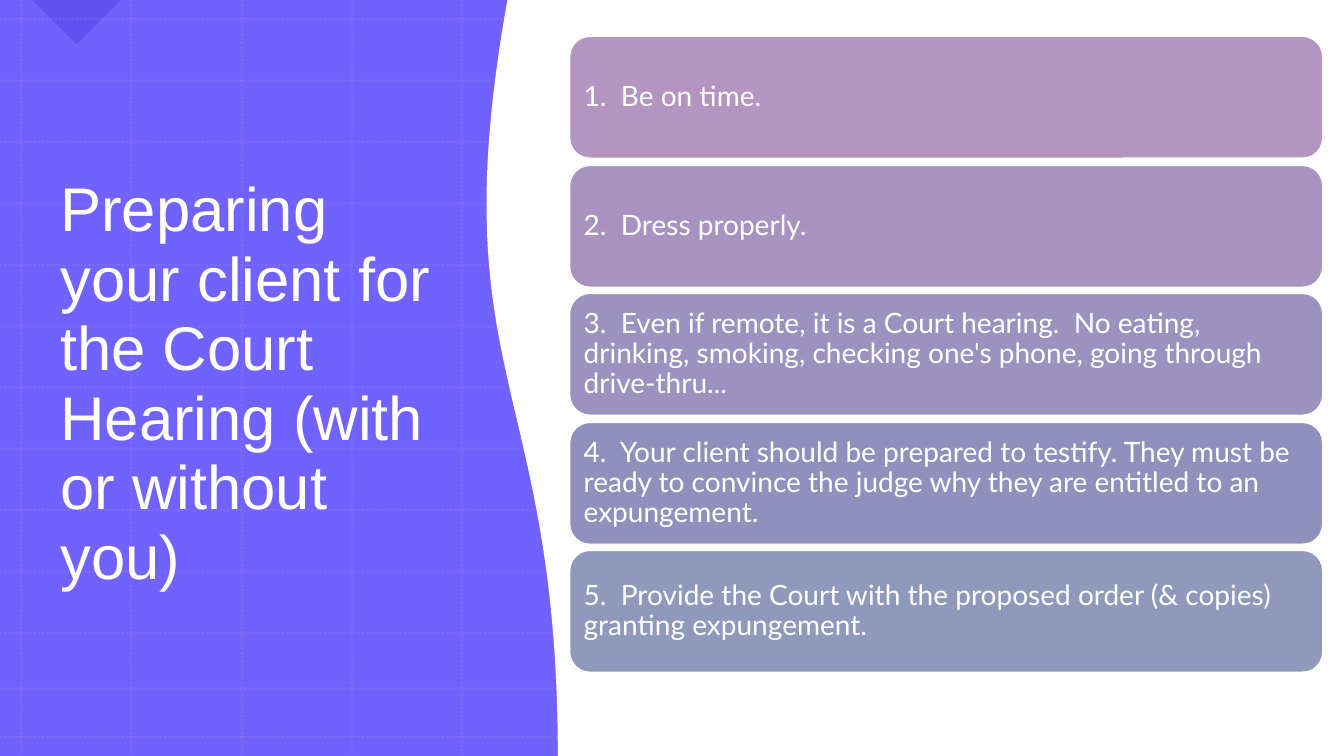
from pptx import Presentation
from pptx.dml.color import RGBColor
from pptx.enum.dml import MSO_LINE
from pptx.enum.shapes import MSO_CONNECTOR, MSO_SHAPE
from pptx.enum.text import MSO_ANCHOR, PP_ALIGN
from pptx.oxml.ns import qn
from pptx.util import Pt
from lxml.etree import SubElement

PX = 9144
WIDE, HIGH = 1333, 750
WHITE = RGBColor(0xFF, 0xFF, 0xFF)
VIOLET = RGBColor(0x71, 0x62, 0xFE)
NAVY = RGBColor(0x12, 0x01, 0xAF)
MAUVE = RGBColor(0xB4, 0x95, 0xC2)
LILAC = RGBColor(0xA8, 0x93, 0xC0)
IRIS = RGBColor(0x9C, 0x92, 0xBF)
DUSK = RGBColor(0x91, 0x90, 0xBD)
SLATE = RGBColor(0x8F, 0x99, 0xBB)

TITLE = "Preparing your client for the Court Hearing (with or without you)"
STEPS = [
    ("1.  Be on time.", MAUVE),
    ("2.  Dress properly.", LILAC),
    ("3.  Even if remote, it is a Court hearing.  No eating, drinking, smoking, "
     "checking one's phone, going through drive-thru...", IRIS),
    ("4.  Your client should be prepared to testify. They must be ready to "
     "convince the judge why they are entitled to an expungement.", DUSK),
    ("5.  Provide the Court with the proposed order (& copies) granting "
     "expungement.", SLATE),
]


def apply(item, style):
    for name, value in style.items():
        setattr(item, name, value)


def fade(fill, share):
    color = fill._xPr.find(qn("a:solidFill"))[0]
    SubElement(color, qn("a:alpha"), val=str(share * 1000))


def paint(shape, color, edge=None):
    shape.shadow.inherit = False
    shape.fill.solid()
    shape.fill.fore_color.rgb = color
    if edge is None:
        shape.line.fill.background()
    else:
        shape.line.color.rgb = edge
        shape.line.width = Pt(1)


def add_block(slide, kind, box, color, edge=None):
    shape = slide.shapes.add_shape(kind, *(n * PX for n in box))
    paint(shape, color, edge)
    return shape


def add_rule(slide, *ends):
    rule = slide.shapes.add_connector(MSO_CONNECTOR.STRAIGHT, *(n * PX for n in ends))
    SubElement(rule._element.spPr, qn("a:effectLst"))
    rule.line.color.rgb = MAUVE
    apply(rule.line, {"width": Pt(1.5), "dash_style": MSO_LINE.ROUND_DOT})
    fade(rule.line.fill, 20)


def add_grid(slide):
    for i in range(5):
        x = round(21 + 109.3 * i)
        add_rule(slide, x, 0, x, HIGH)
    for y in [round(19 + 60.9 * i) for i in range(11)] + [683, 731]:
        add_rule(slide, 0, y, WIDE, y)


def bend(points, t):
    u = 1 - t
    parts = (u ** 3, 3 * u * u * t, 3 * u * t * t, t ** 3)
    return tuple(round(PX * sum(k * p[axis] for k, p in zip(parts, points)))
                 for axis in (0, 1))


def add_wave(slide):
    points = [(554, 750), (554, 376), (437, 374), (504, 0)]
    curve = [bend(points, i / 60) for i in range(61)]
    right = WIDE * PX
    pen = slide.shapes.build_freeform(right, 0, scale=1)
    pen.add_line_segments([(right, HIGH * PX)] + curve, close=True)
    paint(pen.convert_to_shape(), WHITE, WHITE)


def write(shape, text, font, size, space, frame):
    body = shape.text_frame
    apply(body, {"word_wrap": True, "vertical_anchor": MSO_ANCHOR.MIDDLE, **frame})
    line = body.paragraphs[0]
    line.text = text
    apply(line, {"alignment": PP_ALIGN.LEFT, "line_spacing": space})
    apply(line.font, {"name": font, "size": Pt(size)})
    line.font.color.rgb = WHITE


def add_title(slide):
    box = slide.shapes.add_textbox(*(n * PX for n in (50, 79, 408, 605)))
    write(box, TITLE, "Arial", 44, 0.94, {})


def add_steps(slide):
    sides = ("left", "top", "right", "bottom")
    frame = {f"margin_{side}": 8 * PX for side in sides}
    for i, (text, color) in enumerate(STEPS):
        box = (565, round(36 + 127.6 * i), 747, 121)
        card = add_block(slide, MSO_SHAPE.ROUNDED_RECTANGLE, box, color, WHITE)
        write(card, text, "Lato", 20, 0.9, frame)


def main():
    deck = Presentation()
    apply(deck, {"slide_width": WIDE * PX, "slide_height": HIGH * PX})
    slide = deck.slides.add_slide(deck.slide_layouts[6])
    add_block(slide, MSO_SHAPE.RECTANGLE, (0, 0, WIDE, HIGH), VIOLET)
    notch = add_block(slide, MSO_SHAPE.RIGHT_TRIANGLE, (45, -31, 62, 62), NAVY)
    notch.rotation = 315
    fade(notch.fill, 17)
    add_grid(slide)
    add_title(slide)
    add_wave(slide)
    add_steps(slide)
    deck.save("out.pptx")


if __name__ == "__main__":
    main()
